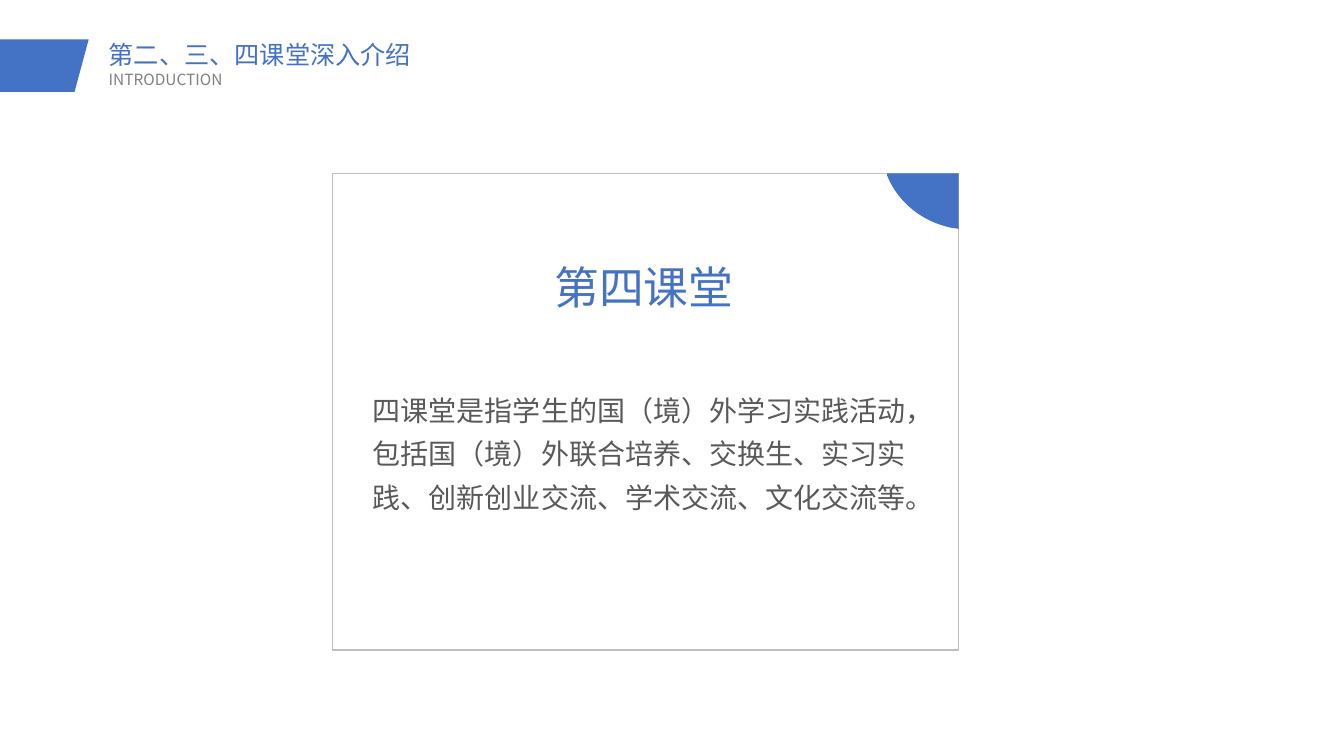
from dataclasses import dataclass
from typing import Optional

from lxml.etree import SubElement
from pptx import Presentation
from pptx.dml.color import RGBColor
from pptx.enum.shapes import MSO_SHAPE
from pptx.enum.text import MSO_AUTO_SIZE
from pptx.oxml.ns import qn
from pptx.util import Pt


@dataclass(frozen=True)
class Theme:
    font: str = "Noto Sans CJK SC"
    blue: str = "4472C4"
    subtitle_grey: str = "808080"
    body_grey: str = "595959"
    border: str = "BFBFBF"
    title_size: float = 18
    subtitle_size: float = 11
    heading_size: float = 32
    body_size: float = 20


@dataclass(frozen=True)
class Label:
    text: str
    left: float
    top: float
    width: float
    height: float
    size: float
    color: str
    spacing: float
    wrap: bool = True


@dataclass(frozen=True)
class Outline:
    points: list[tuple[float, float]]
    color: str


THEME = Theme()

CARD_LEFT, CARD_TOP, CARD_WIDTH, CARD_HEIGHT = 237.6, 123.84, 447.12, 340.56
CARD_RIGHT = CARD_LEFT + CARD_WIDTH
HEADER_LEFT, HEADER_WIDTH = 70.56, 620.64

LABELS = [
    Label("第二、三、四课堂深入介绍", HEADER_LEFT, 26.64, HEADER_WIDTH, 33.84,
          THEME.title_size, THEME.blue, 0.9),
    Label("INTRODUCTION", HEADER_LEFT, 48.24, HEADER_WIDTH, 23.76,
          THEME.subtitle_size, THEME.subtitle_grey, 0.9),
    Label("四课堂是指学生的国（境）外学习实践活动，包括国（境）外联合培养、交换生、"
          "实习实践、创新创业交流、学术交流、文化交流等。",
          259.2, 270, 402.48, 130.32, THEME.body_size, THEME.body_grey, 1.3),
    Label("第四课堂", 388.8, 170.64, 142.56, 45.36,
          THEME.heading_size, THEME.blue, 1.3, wrap=False),
]


def bezier(*controls: tuple[float, float], steps: int = 16) -> list[tuple[float, float]]:
    weights = (1, 3, 3, 1)
    return [
        tuple(sum(w * (1 - i / steps) ** (3 - k) * (i / steps) ** k * c[axis]
                  for k, (w, c) in enumerate(zip(weights, controls)))
              for axis in (0, 1))
        for i in range(steps + 1)
    ]


HEADER_TAB = Outline([(0, 28.08), (63.36, 28.08), (53.28, 65.52), (0, 65.52)], THEME.blue)
CARD_CORNER = Outline(
    [(633.6, CARD_TOP), (CARD_RIGHT, CARD_TOP), (CARD_RIGHT, 163.44),
     *bezier((679.68, 162.72), (658.8, 158.4), (641.52, 144.72), (633.6, 125.28))],
    THEME.blue,
)


def add_outline(slide, outline: Outline) -> None:
    start, *rest = [(Pt(x), Pt(y)) for x, y in outline.points]
    builder = slide.shapes.build_freeform(*start)
    builder.add_line_segments(rest, close=True)
    s = builder.convert_to_shape()
    s.shadow.inherit = False
    s.fill.solid()
    s.fill.fore_color.rgb = RGBColor.from_string(outline.color)
    s.line.fill.background()


def add_card(slide) -> None:
    s = slide.shapes.add_shape(MSO_SHAPE.RECTANGLE, Pt(CARD_LEFT), Pt(CARD_TOP),
                               Pt(CARD_WIDTH), Pt(CARD_HEIGHT))
    s.shadow.inherit = False
    s.fill.background()
    s.line.color.rgb = RGBColor.from_string(THEME.border)
    s.line.width = Pt(1)


def add_label(slide, label: Label, theme: Optional[Theme] = None) -> None:
    theme = theme or THEME
    s = slide.shapes.add_textbox(Pt(label.left), Pt(label.top),
                                 Pt(label.width), Pt(label.height))
    tf = s.text_frame
    tf.word_wrap = label.wrap
    tf.auto_size = MSO_AUTO_SIZE.NONE
    tf.text = label.text
    p = tf.paragraphs[0]
    p.line_spacing = label.spacing
    r = p.runs[0]
    r.font.size = Pt(label.size)
    r.font.name = theme.font
    r.font.color.rgb = RGBColor.from_string(label.color)
    SubElement(r.font._element, qn("a:ea")).set("typeface", theme.font)


def main() -> None:
    prs = Presentation()
    prs.slide_width, prs.slide_height = Pt(960), Pt(540)
    slide = prs.slides.add_slide(prs.slide_layouts[6])
    add_outline(slide, HEADER_TAB)
    add_card(slide)
    for label in LABELS:
        add_label(slide, label)
    add_outline(slide, CARD_CORNER)
    prs.save("out.pptx")


if __name__ == "__main__":
    main()
